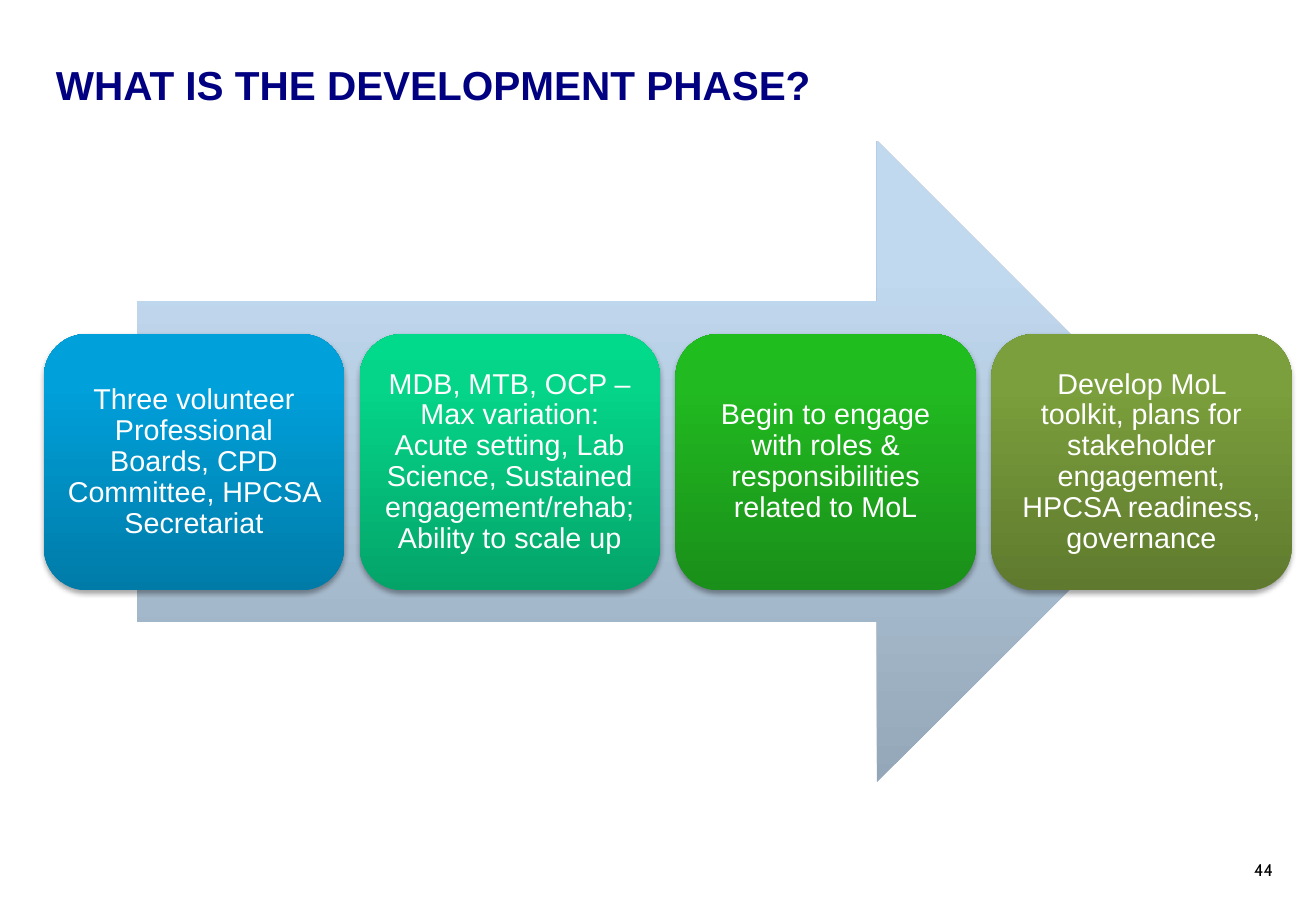
from copy import deepcopy

from lxml.etree import SubElement
from pptx import Presentation
from pptx.dml.color import RGBColor
from pptx.enum.shapes import MSO_SHAPE
from pptx.enum.text import MSO_ANCHOR, PP_ALIGN
from pptx.oxml.ns import qn
from pptx.util import Pt

# Content
TITLE = "WHAT IS THE DEVELOPMENT PHASE?"
SLIDE_NUMBER = "44"
ARROW_COLORS = ("94A7B8", "C1D9EF", "C1DAF1")
CARDS = [
    ("Three volunteer Professional Boards, CPD Committee, HPCSA Secretariat",
     ("007BA8", "00A0DA", "00A0DB")),
    ("MDB, MTB, OCP – Max variation: Acute setting, Lab Science, "
     "Sustained engagement/rehab; Ability to scale up",
     ("04A469", "05D589", "01DA8A")),
    ("Begin to engage with roles & responsibilities related to MoL",
     ("1A8F19", "21BA21", "1FBE1E")),
    ("Develop MoL toolkit, plans for stakeholder engagement, "
     "HPCSA readiness, governance",
     ("5F7A2E", "7B9F3C", "7CA13B")),
]

# Layout in points
CARD_LEFT, CARD_TOP, CARD_WIDTH, CARD_HEIGHT = 26, 198, 178, 152
CARD_STEP = 187.2
CARD_INSET = 5
GRADIENT_POSITIONS = (0, 0.8, 1)


def color(hex_string):
    return RGBColor.from_string(hex_string)


def add_plain_shape(kind, left, top, width, height):
    shape = slide.shapes.add_shape(kind, Pt(left), Pt(top), Pt(width), Pt(height))
    shape.shadow.inherit = False
    shape.fill.background()
    shape.line.fill.background()
    return shape


def fill_upward(shape, hex_colors):
    """Three-stop gradient running from the bottom edge to the top."""
    shape.fill.gradient()
    shape.fill.gradient_angle = 90
    stop_list = shape.fill.gradient_stops
    first_stop = next(shape.element.spPr.iter(qn("a:gs")))
    first_stop.addnext(deepcopy(first_stop))
    stop_list = shape.fill.gradient_stops
    for stop, position, hex_color in zip(stop_list, GRADIENT_POSITIONS, hex_colors):
        stop.position = position
        stop.color.rgb = color(hex_color)


def add_soft_shadow(shape):
    effects = shape.element.spPr.find(qn("a:effectLst"))
    shadow = SubElement(effects, qn("a:outerShdw"), blurRad=str(Pt(3.1)),
                        dist=str(Pt(1.8)), dir="5400000", rotWithShape="0")
    shade = SubElement(shadow, qn("a:srgbClr"), val="000000")
    SubElement(shade, qn("a:alpha"), val="35000")


def write(shape, text, size, font_name, hex_color, anchor, align=PP_ALIGN.LEFT):
    frame = shape.text_frame
    frame.word_wrap = True
    frame.vertical_anchor = anchor
    paragraph = frame.paragraphs[0]
    paragraph.text = text
    paragraph.alignment = align
    paragraph.font.size = Pt(size)
    paragraph.font.name = font_name
    paragraph.font.color.rgb = color(hex_color)
    return paragraph


presentation = Presentation()
presentation.slide_width, presentation.slide_height = Pt(780), Pt(540)
slide = presentation.slides.add_slide(presentation.slide_layouts[6])

# Title and slide number
title = slide.shapes.add_textbox(Pt(26), Pt(28.5), Pt(641.5), Pt(43))
write(title, TITLE, 24, "Arial", "000080", MSO_ANCHOR.MIDDLE).font.bold = True
number = add_plain_shape(MSO_SHAPE.OVAL, 730, 500.4, 43.2, 39.6)
write(number, SLIDE_NUMBER, 10, "Cabin", "000000", MSO_ANCHOR.TOP)

# Arrow behind the cards
arrow = add_plain_shape(MSO_SHAPE.RIGHT_ARROW, 81.3, 83.5, 628.6, 380.2)
fill_upward(arrow, ARROW_COLORS)

# Cards
for index, (text, hex_colors) in enumerate(CARDS):
    card = add_plain_shape(MSO_SHAPE.ROUNDED_RECTANGLE, CARD_LEFT + index * CARD_STEP,
                           CARD_TOP, CARD_WIDTH, CARD_HEIGHT)
    fill_upward(card, hex_colors)
    add_soft_shadow(card)
    frame = card.text_frame
    frame.margin_left = frame.margin_right = Pt(CARD_INSET)
    frame.margin_top = frame.margin_bottom = Pt(CARD_INSET)
    paragraph = write(card, text, 17, "Arial", "FFFFFF", MSO_ANCHOR.MIDDLE, PP_ALIGN.CENTER)
    paragraph.line_spacing = 0.9

presentation.save("out.pptx")
